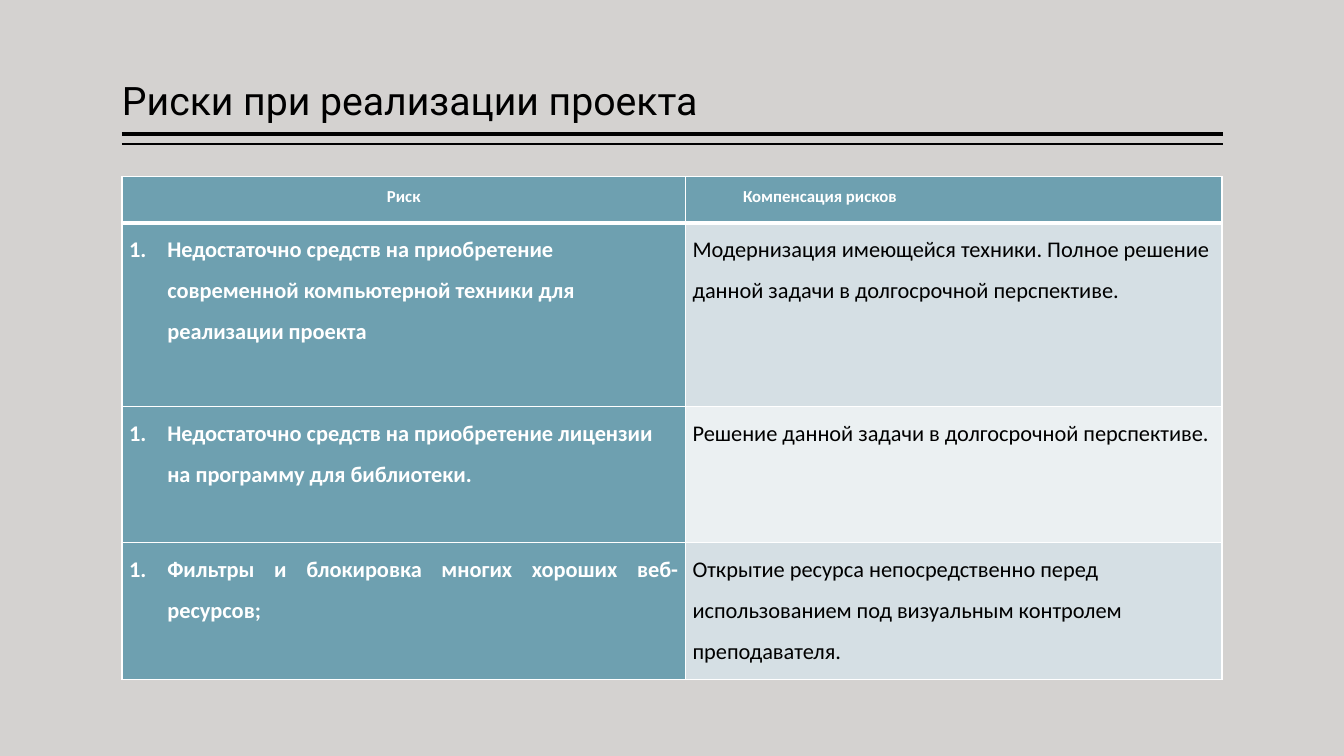
from lxml.etree import SubElement as Sub
from pptx import Presentation
from pptx.dml.color import RGBColor
from pptx.enum.shapes import MSO_CONNECTOR as Conn
from pptx.enum.text import MSO_ANCHOR as Anchor, PP_ALIGN as Align
from pptx.oxml.ns import qn
from pptx.util import Inches, Pt

LEFT, WIDTH = 1.21, 10.92
BLACK, WHITE, TEAL = "000000", "FFFFFF", "6EA0B0"
COLS = [5.59, 5.32]
ROWS = [0.46, 1.82, 1.35, 1.36]
BANDS = ["D5DFE4", "EBF0F2"]
HEADS = [("Риск", Align.CENTER, 0), ("Компенсация рисков", Align.JUSTIFY, 0.5)]
RISKS = [
    ("Недостаточно средств на приобретение современной компьютерной техники для реализации проекта",
     "Модернизация имеющейся техники. Полное решение данной задачи в долгосрочной перспективе.",
     Align.LEFT),
    ("Недостаточно средств на приобретение лицензии на программу для библиотеки.",
     "Решение данной задачи в долгосрочной перспективе.",
     Align.LEFT),
    ("Фильтры и блокировка многих хороших веб-ресурсов;",
     "Открытие ресурса непосредственно перед использованием под визуальным контролем преподавателя.",
     Align.JUSTIFY),
]


def paint(fill, color):
    """Make a fill solid in the given hex colour."""
    fill.solid()
    fill.fore_color.rgb = RGBColor.from_string(color)


def style(para, face, size, color, bold=False):
    """Set the font of a paragraph."""
    font = para.font
    font.name, font.size, font.bold = face, Pt(size), bold
    paint(font.fill, color)


def add_title(slide, text):
    """Add the title, resting on the rules below it."""
    box = slide.shapes.add_textbox(Inches(LEFT), Inches(0.08), Inches(WIDTH), Inches(1.2))
    frame = box.text_frame
    frame.word_wrap = True
    frame.vertical_anchor = Anchor.BOTTOM
    frame.margin_left = frame.margin_right = 0
    para = frame.paragraphs[0]
    para.text = text
    para.line_spacing = 0.9
    style(para, "Roboto", 28, BLACK)


def add_rule(slide, top, weight):
    """Draw a horizontal rule across the content width."""
    rule = slide.shapes.add_connector(
        Conn.STRAIGHT, Inches(LEFT), Inches(top), Inches(LEFT + WIDTH), Inches(top))
    paint(rule.line.fill, BLACK)
    rule.line.width = Pt(weight)
    Sub(rule._element.spPr, qn("a:effectLst"))


def add_edges(cell, top, bottom):
    """Give a cell white borders."""
    props = cell._tc.get_or_add_tcPr()
    for side, weight in zip("LRTB", (1, 1, top, bottom)):
        edge = Sub(props, qn(f"a:ln{side}"), w=str(Pt(weight)))
        Sub(Sub(edge, qn("a:solidFill")), qn("a:srgbClr"), val=WHITE)


def fill_cell(cell, text, back, color, size=16, bold=True, align=Align.LEFT,
              indent=0, number=False, top=1, bottom=1):
    """Write one table cell with its borders, fill and text."""
    add_edges(cell, top, bottom)
    paint(cell.fill, back)
    cell.margin_left = cell.margin_right = Inches(0.07)
    cell.margin_top = cell.margin_bottom = 0
    para = cell.text_frame.paragraphs[0]
    para.text = text
    para.alignment = align
    para.line_spacing = 1.5
    props = para._p.get_or_add_pPr()
    props.set("marL", str(Inches(indent)))
    if number:
        props.set("indent", str(-Inches(indent)))
        Sub(props, qn("a:buAutoNum"), type="arabicPeriod")
    style(para, "Calibri", size, color, bold)


def add_risks(slide):
    """Add the table of risks and remedies."""
    table = slide.shapes.add_table(
        len(ROWS), len(COLS), Inches(LEFT), Inches(1.75), Inches(WIDTH), Inches(sum(ROWS))).table
    for col, width in zip(table.columns, COLS):
        col.width = Inches(width)
    for row, height in zip(table.rows, ROWS):
        row.height = Inches(height)
    for col, (text, align, indent) in enumerate(HEADS):
        fill_cell(table.cell(0, col), text, TEAL, WHITE, 12, align=align, indent=indent, bottom=3)
    for row, (risk, remedy, align) in enumerate(RISKS, 1):
        top = 3 if row == 1 else 1
        fill_cell(table.cell(row, 0), risk, TEAL, WHITE, align=align,
                  indent=0.38, number=True, top=top)
        fill_cell(table.cell(row, 1), remedy, BANDS[(row - 1) % 2], BLACK, bold=False, top=top)


def main():
    """Build and save the slide."""
    deck = Presentation()
    deck.slide_width, deck.slide_height = Inches(13.33), Inches(7.5)
    slide = deck.slides.add_slide(deck.slide_layouts[6])
    paint(slide.background.fill, "D4D2D0")
    add_rule(slide, 1.33, 3)
    add_rule(slide, 1.43, 1)
    add_title(slide, "Риски при реализации проекта")
    add_risks(slide)
    deck.save("out.pptx")


if __name__ == "__main__":
    main()
